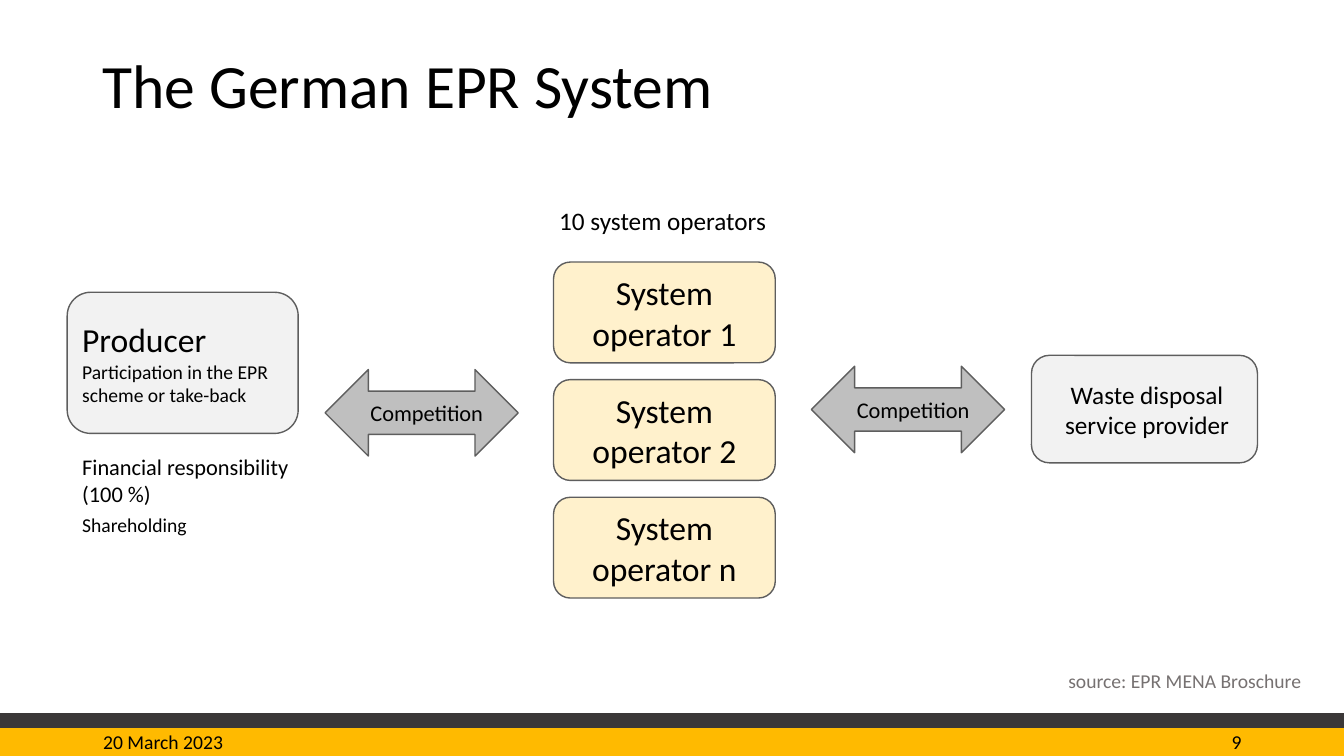
from pptx import Presentation
from pptx.dml.color import RGBColor
from pptx.enum.shapes import MSO_SHAPE
from pptx.enum.text import MSO_ANCHOR, PP_ALIGN
from pptx.util import Inches, Pt

RECT, ROUND = MSO_SHAPE.RECTANGLE, MSO_SHAPE.ROUNDED_RECTANGLE
ARROW = MSO_SHAPE.LEFT_RIGHT_ARROW
TOP, MID = MSO_ANCHOR.TOP, MSO_ANCHOR.MIDDLE
LEFT, MIDDLE, RIGHT = PP_ALIGN.LEFT, PP_ALIGN.CENTER, PP_ALIGN.RIGHT
COLS, ROWS = 160, 90
CELL = Inches(7.5) / ROWS
PALE, CREAM, SILVER, EDGE = "F2F2F2", "FFF1CC", "BFBFBF", "5E5E5E"


def span(*cells):
    """Turn grid cells into lengths."""
    return [round(n * CELL) for n in cells]


def paint(target, color):
    """Set a colour on a font, or on a fill made solid."""
    if hasattr(target, "solid"):
        target.solid()
        target = target.fore_color
    else:
        target = target.color
    target.rgb = RGBColor.from_string(color)


def write(frame, lines, align=LEFT, color="000000", **form):
    """Fill a text frame with (text, size) lines."""
    form = {"word_wrap": True, "vertical_anchor": TOP, **form}
    for name, value in form.items():
        setattr(frame, name, value)
    for i, (text, size) in enumerate(lines):
        para = frame.add_paragraph() if i else frame.paragraphs[0]
        para.text, para.alignment = text, align
        for name, value in {"name": "Calibri", "size": Pt(size)}.items():
            setattr(para.font, name, value)
        paint(para.font, color)


def label(slide, place, lines, **form):
    """Add a text box."""
    write(slide.shapes.add_textbox(*span(*place)).text_frame, lines, **form)


def block(slide, kind, place, fill, edge=EDGE):
    """Add a filled shape with an optional outline."""
    shape = slide.shapes.add_shape(kind, *span(*place))
    shape.shadow.inherit = False
    paint(shape.fill, fill)
    if edge:
        paint(shape.line.fill, edge)
        shape.line.width = Pt(1)
    else:
        shape.line.fill.background()
    return shape


def node(slide, kind, place, fill, lines, **form):
    """Add an outlined shape that holds text."""
    shape = block(slide, kind, place, fill)
    write(shape.text_frame, lines, vertical_anchor=MID, **form)


def head(slide, text):
    """Place and format the title."""
    title = slide.shapes.title
    title.left, title.top, title.width, title.height = span(11, 4.8, 138, 11.5)
    write(title.text_frame, [(text, 44)], vertical_anchor=MID)
    title.text_frame.paragraphs[0].line_spacing = 0.9


def foot(slide):
    """Draw the footer bars, date and page number."""
    block(slide, RECT, (0, 86.6, COLS, 3.4), "FFBA00", None)
    block(slide, RECT, (0, 84.9, COLS, 1.75), "3B3838", None)
    label(slide, (11.1, 86.3, 36, 4.8), [("20 March 2023", 14)])
    label(slide, (113, 86.3, 36, 4.8), [("9", 14)], align=RIGHT)


def main():
    """Build the slide and save it."""
    deck = Presentation()
    deck.slide_width, deck.slide_height = span(COLS, ROWS)
    slide = deck.slides.add_slide(deck.slide_layouts[5])
    foot(slide)
    head(slide, "The German EPR System")

    node(slide, ROUND, (8, 34.8, 27.5, 16.8), PALE,
         [("Producer", 24), ("Participation in the EPR scheme or take-back", 14)],
         margin_left=Inches(0.08), margin_right=Inches(0.08))
    label(slide, (8.6, 53.4, 42.4, 7.7),
          [("Financial responsibility", 16), ("(100 %)", 16)])
    label(slide, (8.6, 60.5, 24, 4.1), [("Shareholding", 14)])

    label(slide, (65.4, 23.8, 82.6, 4.8), [("10 system operators", 18)])
    for i, mark in enumerate("12n"):
        node(slide, ROUND, (65.9, 31.2 + 14 * i, 26.4, 12), CREAM,
             [(f"System operator {mark}", 24)], align=MIDDLE)

    for left, top in (38.7, 44), (96.6, 43.6):
        node(slide, ARROW, (left, top, 23, 10.3), SILVER, [("Competition", 16)],
             align=MIDDLE, margin_left=Inches(0.2))

    node(slide, ROUND, (122.8, 42.3, 26.9, 12.8), PALE,
         [("Waste disposal service provider", 18)],
         align=MIDDLE, margin_left=Inches(0.15))
    label(slide, (126, 79.1, 30.4, 4.1), [("source: EPR MENA Broschure", 14)],
          color="767171", word_wrap=False)
    deck.save("out.pptx")


if __name__ == "__main__":
    main()
